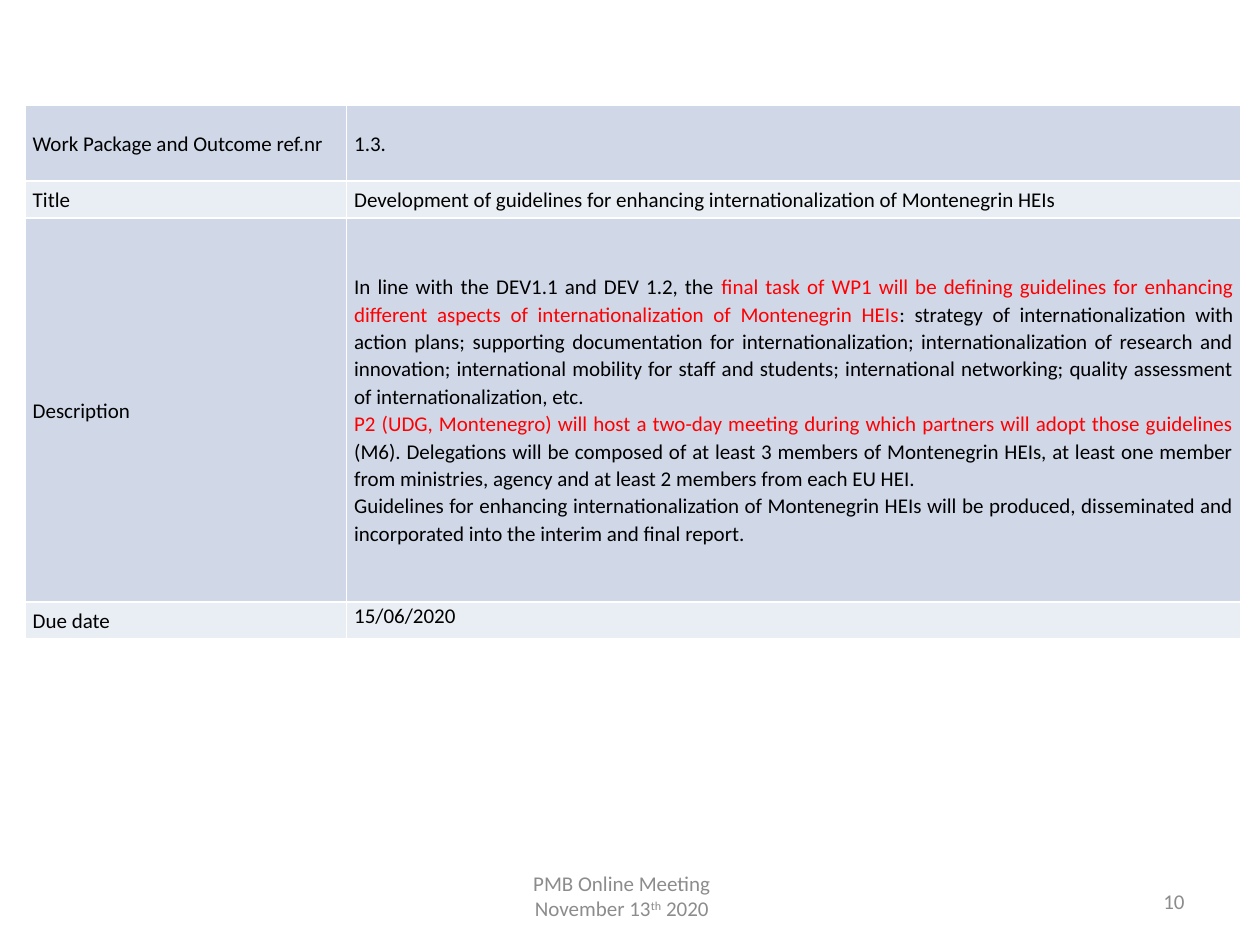
import pptx
import pptx.dml.color
import pptx.enum.text
import pptx.oxml
import pptx.oxml.ns
import pptx.util
from pptx.util import Cm

ALIGN = pptx.enum.text.PP_ALIGN
ANCHOR = pptx.enum.text.MSO_ANCHOR
COLOURS = {
    "text": "000000",
    "accent": "FF0000",
    "footer": "8C8C8C",
    "border": "FFFFFF",
    "bands": ("D0D8E8", "E9EDF4"),
}

# A paragraph is a list of (text, style) spans; style is a colour name or "superscript"
DESCRIPTION = [
    [
        ("In line with the DEV1.1 and DEV 1.2, the ", "text"),
        ("final task of WP1 will be defining guidelines for enhancing different "
         "aspects of internationalization of Montenegrin HEIs", "accent"),
        (": strategy of internationalization with action plans; supporting "
         "documentation for internationalization; internationalization of research "
         "and innovation; international mobility for staff and students; "
         "international networking; quality assessment of internationalization, "
         "etc. ", "text"),
    ],
    [
        ("P2 (UDG, Montenegro) will host a two-day meeting during which partners "
         "will adopt those guidelines ", "accent"),
        ("(M6). Delegations will be composed of at least 3 members of Montenegrin "
         "HEIs, at least one member from ministries, agency and at least 2 members "
         "from each EU HEI.", "text"),
    ],
    [
        ("Guidelines for enhancing internationalization of Montenegrin HEIs will be "
         "produced, disseminated and incorporated into the interim and final "
         "report.", "text"),
    ],
]


def plain(text, style="text"):
    return [[(text, style)]]


# Label, content, row height in cm
ROWS = [
    ("Work Package and Outcome ref.nr", plain("1.3."), 1.52),
    ("Title", plain("Development of guidelines for enhancing internationalization "
                    "of Montenegrin HEIs"), 0.74),
    ("Description", DESCRIPTION, 7.75),
    ("Due date", plain("15/06/2020"), 0.74),
]


class SlideBuilder:
    font_name = "Calibri"
    font_size = 12

    def __init__(self, deck):
        self.page = deck.slides.add_slide(deck.slide_layouts[6])

    def paragraphs(self, frame, paragraphs, align, line_spacing=1.0):
        for index, spans in enumerate(paragraphs):
            para = frame.add_paragraph() if index else frame.paragraphs[0]
            para.alignment = align
            para.line_spacing = line_spacing
            for text, style in spans:
                span = para.add_run()
                span.text = text
                span.font.name = self.font_name
                span.font.size = pptx.util.Pt(self.font_size)
                raised = style == "superscript"
                colour = COLOURS["footer" if raised else style]
                span.font.color.rgb = pptx.dml.color.RGBColor.from_string(colour)
                if raised:
                    span._r.get_or_add_rPr().set("baseline", "30000")

    def text(self, left, top, width, height, paragraphs, align):
        box = self.page.shapes.add_textbox(Cm(left), Cm(top), Cm(width), Cm(height))
        frame = box.text_frame
        frame.word_wrap = True
        frame.vertical_anchor = ANCHOR.MIDDLE
        self.paragraphs(frame, paragraphs, align)

    def border(self, cell):
        properties = cell._tc.get_or_add_tcPr()
        for side in ("lnL", "lnR", "lnT", "lnB"):
            properties.append(pptx.oxml.parse_xml(
                f'<a:{side} {pptx.oxml.ns.nsdecls("a")} w="12700"><a:solidFill>'
                f'<a:srgbClr val="{COLOURS["border"]}"/></a:solidFill></a:{side}>'))

    def cell(self, cell, paragraphs, fill, align, anchor):
        cell.margin_left = cell.margin_right = Cm(0.15)
        cell.margin_top = cell.margin_bottom = 0
        cell.vertical_anchor = anchor
        self.border(cell)
        cell.fill.solid()
        cell.fill.fore_color.rgb = pptx.dml.color.RGBColor.from_string(fill)
        self.paragraphs(cell.text_frame, paragraphs, align, line_spacing=1.07)

    def table(self, left, top, widths, rows):
        height = sum(row[2] for row in rows)
        table = self.page.shapes.add_table(
            len(rows), len(widths), Cm(left), Cm(top), Cm(sum(widths)), Cm(height)).table
        table.first_row = table.horz_banding = False
        for column, width in zip(table.columns, widths):
            column.width = Cm(width)
        for index, (label, content, row_height) in enumerate(rows):
            table.rows[index].height = Cm(row_height)
            fill = COLOURS["bands"][index % 2]
            align = ALIGN.JUSTIFY if len(content) > 1 else ALIGN.LEFT
            anchor = ANCHOR.TOP if index == len(rows) - 1 else ANCHOR.MIDDLE
            self.cell(table.cell(index, 0), plain(label), fill, ALIGN.LEFT, ANCHOR.MIDDLE)
            self.cell(table.cell(index, 1), content, fill, align, anchor)


def main():
    deck = pptx.Presentation()
    deck.slide_width, deck.slide_height = Cm(25.4), Cm(19.05)
    slide = SlideBuilder(deck)

    # Work package table
    slide.table(0.51, 2.13, (6.48, 18.03), ROWS)

    # Footer and page number
    footer = [
        [("PMB Online Meeting", "footer")],
        [("November 13", "footer"), ("th", "superscript"), (" 2020", "footer")],
    ]
    slide.text(5.51, 17.58, 14.05, 0.94, footer, ALIGN.CENTER)
    slide.text(18.21, 17.65, 5.92, 1.02, plain("10", "footer"), ALIGN.RIGHT)

    deck.save("out.pptx")


if __name__ == "__main__":
    main()
